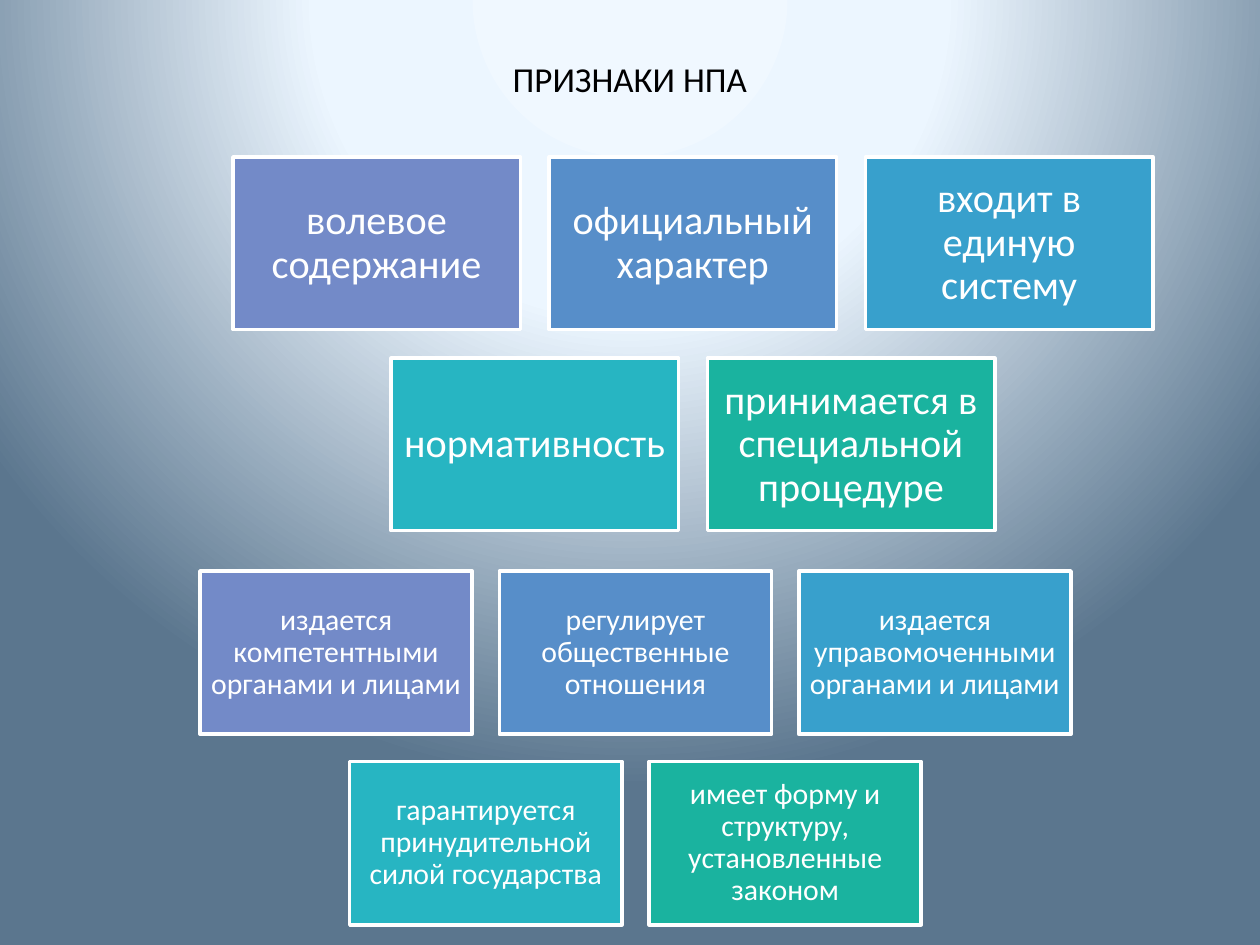
from lxml import etree
from pptx import Presentation
from pptx.dml.color import RGBColor
from pptx.enum.shapes import MSO_SHAPE as Shape
from pptx.enum.text import MSO_ANCHOR as Anchor, PP_ALIGN as Align
from pptx.oxml import parse_xml
from pptx.oxml.ns import nsdecls, qn
from pptx.util import Emu, Pt

SLIDE_WIDTH, SLIDE_HEIGHT = 1260, 945
EMU_PER_PX = 914400 / 126
FONT = "Calibri"

COLORS = {
    "glow": "F0F8FF",
    "halo": "ECF6FF",
    "edge": "5B768E",
    "white": "FFFFFF",
    "black": "000000",
    "violet": "738AC8",
    "blue": "578EC9",
    "sky": "38A0CC",
    "turquoise": "27B5C2",
    "green": "1AB39F",
}
CARD_COLORS = ["violet", "blue", "sky", "turquoise", "green"]

MAIN_FEATURES = [
    "волевое содержание",
    "официальный характер",
    "входит в единую систему",
    "нормативность",
    "принимается в специальной процедуре",
]
FURTHER_FEATURES = [
    "издается компетентными органами и лицами",
    "регулирует общественные отношения",
    "издается управомоченными органами и лицами",
    "гарантируется принудительной силой государства",
    "имеет форму и структуру, установленные законом",
]


def px(length):
    return Emu(round(length * EMU_PER_PX))


def color(name):
    return RGBColor.from_string(COLORS[name])


def write_centred(shape, text, size, color_name, inset, line_spacing=1.0):
    frame = shape.text_frame
    frame.word_wrap = True
    frame.vertical_anchor = Anchor.MIDDLE
    frame.margin_left = frame.margin_right = px(inset)
    frame.margin_top = frame.margin_bottom = px(inset)
    paragraph = frame.paragraphs[0]
    paragraph.alignment = Align.CENTER
    paragraph.line_spacing = line_spacing
    run = paragraph.add_run()
    run.text = text
    run.font.name = FONT
    run.font.size = Pt(size)
    run.font.color.rgb = color(color_name)


def paint_background(slide):
    """Radial glow centred above the top edge."""
    fill = slide.background.fill
    fill.gradient()
    old = slide.background._cSld.find(".//" + qn("a:gradFill"))
    gradient = parse_xml(f'<a:gradFill {nsdecls("a")} rotWithShape="1"><a:gsLst/></a:gradFill>')
    for position, name in [(0, "glow"), (40, "halo"), (100, "edge")]:
        stop = etree.SubElement(gradient[0], qn("a:gs"), pos=str(position * 1000))
        etree.SubElement(stop, qn("a:srgbClr"), val=COLORS[name])
    circle = etree.SubElement(gradient, qn("a:path"), path="circle")
    etree.SubElement(circle, qn("a:fillToRect"), l="50000", t="-80000", r="50000", b="180000")
    old.getparent().replace(old, gradient)


def add_title(slide, left, top, width, height):
    title = slide.shapes.add_textbox(px(left), px(top), px(width), px(height))
    write_centred(title, "ПРИЗНАКИ НПА", 20, "black", inset=6)


def add_feature_cards(slide, left, top, width, features, size, inset):
    """Three cards above two centred ones; gaps are a tenth of a card's width."""
    card_width = width / 3.2
    card_height = card_width * 0.6
    gap = card_width * 0.1
    for index, (text, fill_name) in enumerate(zip(features, CARD_COLORS)):
        row, column = divmod(index, 3)
        x = left + (column + row / 2) * (card_width + gap)
        y = top + row * (card_height + gap)
        card = slide.shapes.add_shape(
            Shape.RECTANGLE, px(x), px(y), px(card_width), px(card_height))
        card.shadow.inherit = False
        card.fill.solid()
        card.fill.fore_color.rgb = color(fill_name)
        card.line.color.rgb = color("white")
        card.line.width = Pt(2)
        write_centred(card, text, size, "white", inset, line_spacing=0.9)


def main():
    presentation = Presentation()
    presentation.slide_width = px(SLIDE_WIDTH)
    presentation.slide_height = px(SLIDE_HEIGHT)
    slide = presentation.slides.add_slide(presentation.slide_layouts[6])

    paint_background(slide)
    # Lower group of features
    add_feature_cards(slide, 200, 571, 871, FURTHER_FEATURES, size=17, inset=9)
    add_title(slide, 63, 38, 1134, 81)
    # Upper group of features
    add_feature_cards(slide, 233, 157, 920, MAIN_FEATURES, size=23, inset=12)

    presentation.save("out.pptx")


if __name__ == "__main__":
    main()
